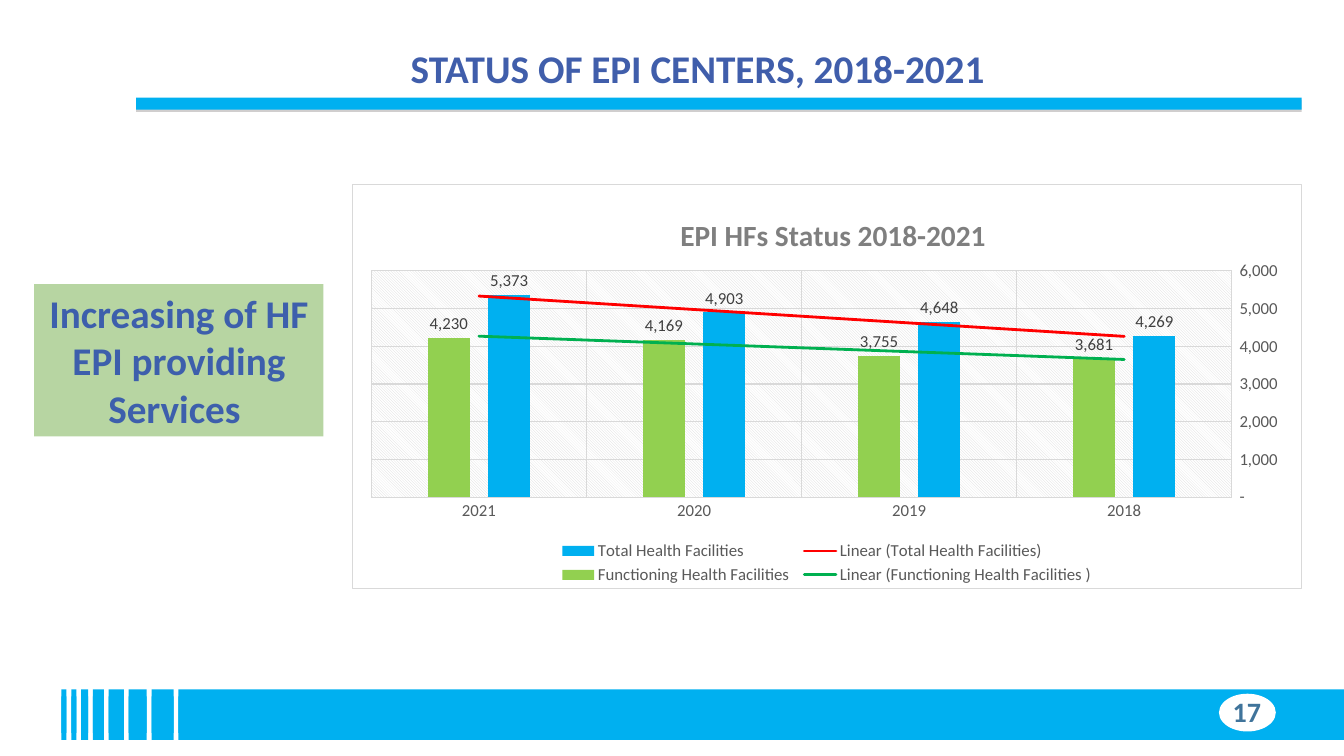
from dataclasses import dataclass

from lxml import etree
from pptx import Presentation
from pptx.chart.data import CategoryChartData
from pptx.dml.color import RGBColor
from pptx.enum import chart as charts, shapes, text
from pptx.oxml import parse_xml
from pptx.oxml.ns import nsdecls, qn
from pptx.util import Pt

SKY = RGBColor(0x00, 0xB0, 0xF0)
LIME = RGBColor(0x92, 0xD0, 0x50)
GREEN = RGBColor(0x00, 0xB0, 0x50)
LEAF = RGBColor(0x70, 0xAD, 0x47)
RED = RGBColor(0xFF, 0x00, 0x00)
WHITE = RGBColor(0xFF, 0xFF, 0xFF)
SILVER = RGBColor(0xD0, 0xCE, 0xCE)
GRID = RGBColor(0xD9, 0xD9, 0xD9)
TITLE_GRAY = RGBColor(0x7F, 0x7F, 0x7F)
AXIS_GRAY = RGBColor(0x59, 0x59, 0x59)
LABEL_GRAY = RGBColor(0x40, 0x40, 0x40)
NAVY = RGBColor(0x40, 0x5E, 0xAB)
CALLOUT_BLUE = RGBColor(0x3D, 0x5F, 0xAC)
PAGE_BLUE = RGBColor(0x40, 0x74, 0x9B)
FONT = "Calibri"
ACCOUNTING = '_(* #,##0_);_(* \\(#,##0\\);_(* "-"??_);_(@_)'


@dataclass(frozen=True)
class Box:
    left: float
    top: float
    width: float
    height: float

    def lengths(self) -> tuple:
        return Pt(self.left), Pt(self.top), Pt(self.width), Pt(self.height)


@dataclass(frozen=True)
class Facilities:
    name: str
    counts: tuple
    color: RGBColor
    trend: RGBColor


YEARS = ("2018", "2019", "2020", "2021")
FACILITIES = (
    Facilities("Total Health Facilities", (4269, 4648, 4903, 5373), SKY, RED),
    Facilities("Functioning Health Facilities ", (3681, 3755, 4169, 4230), LIME, GREEN),
)
STRIPE_WIDTHS = (3.6, 3.6, 5.04, 7.92, 10.8, 12.96, 15.84, 832.5)
STRIPE_GAP = 3.4


def style_font(font, size: float, color: RGBColor, bold: bool = False) -> None:
    font.name, font.size, font.bold = FONT, Pt(size), bold
    font.color.rgb = color


def add_plain_shape(page, box: Box, color: RGBColor,
                    kind=shapes.MSO_SHAPE.RECTANGLE):
    shape = page.shapes.add_shape(kind, *box.lengths())
    shape.shadow.inherit = False
    shape.fill.solid()
    shape.fill.fore_color.rgb = color
    shape.line.fill.background()
    return shape


def add_heading(page) -> None:
    heading = page.shapes.title
    heading.left, heading.top, heading.width, heading.height = Box(
        270, 28, 456.5, 34).lengths()
    frame = heading.text_frame
    frame.text = "STATUS OF EPI CENTERS, 2018-2021"
    frame.auto_size = text.MSO_AUTO_SIZE.NONE
    frame.vertical_anchor = text.MSO_ANCHOR.TOP
    para = frame.paragraphs[0]
    para.alignment = text.PP_ALIGN.CENTER
    style_font(para.font, 28, NAVY, True)
    for top, color in ((71.3, SILVER), (69.8, SKY)):
        add_plain_shape(page, Box(97.2, top, 832.5, 8.6), color)


def add_footer(page) -> None:
    left = 43.9
    for width in STRIPE_WIDTHS:
        for top in (497.5, 492.5):
            add_plain_shape(page, Box(left, top, width, 31), SKY)
        left += width + STRIPE_GAP
    badge = add_plain_shape(page, Box(871.2, 496, 39.6, 26), WHITE,
                            shapes.MSO_SHAPE.OVAL)
    badge.line.color.rgb = WHITE
    badge.line.width = Pt(1)
    number = page.shapes.add_textbox(*Box(873.4, 492.5, 36, 31.5).lengths())
    number.text_frame.text = "17"
    number.text_frame.word_wrap = True
    style_font(number.text_frame.paragraphs[0].font, 20, PAGE_BLUE, True)


def add_callout(page) -> None:
    callout = add_plain_shape(page, Box(24.5, 203, 206.6, 108.7), LEAF)
    color = callout.fill._xPr.find(qn("a:solidFill"))[0]
    etree.SubElement(color, qn("a:alpha"), val="50000")
    frame = callout.text_frame
    frame.word_wrap = True
    frame.text = "Increasing of HF EPI providing Services "
    para = frame.paragraphs[0]
    para.alignment = text.PP_ALIGN.CENTER
    style_font(para.font, 28, CALLOUT_BLUE, True)


def manual_layout(inner: bool = False, **edges: float):
    """Chart layout whose edges are fractions of the chart area."""
    target = '<c:layoutTarget val="inner"/>' if inner else ""
    modes = "".join(f'<c:{edge}Mode val="edge"/>' for edge in "xy")
    values = "".join(f'<c:{edge} val="{value}"/>' for edge, value in edges.items())
    return parse_xml(f'<c:layout {nsdecls("c")}><c:manualLayout>{target}{modes}'
                     f'{values}</c:manualLayout></c:layout>')


def remove_layout(element) -> None:
    for layout in element.findall(qn("c:layout")):
        element.remove(layout)


def area_style(fill: str, border: str):
    return parse_xml(f'<c:spPr {nsdecls("c", "a")}>{fill}{border}</c:spPr>')


def add_trend(series, color: RGBColor) -> None:
    trend = parse_xml(
        f'<c:trendline {nsdecls("c", "a")}><c:spPr><a:ln w="{Pt(2)}" cap="rnd">'
        f'<a:solidFill><a:srgbClr val="{color}"/></a:solidFill></a:ln></c:spPr>'
        '<c:trendlineType val="linear"/><c:dispRSqr val="0"/>'
        '<c:dispEq val="0"/></c:trendline>')
    series._element.find(qn("c:cat")).addprevious(trend)


def style_axis(axis) -> None:
    axis.major_tick_mark = axis.minor_tick_mark = charts.XL_TICK_MARK.NONE
    axis.has_major_gridlines = True
    style_font(axis.tick_labels.font, 12, AXIS_GRAY)
    grid = axis.major_gridlines.format.line
    grid.color.rgb = GRID
    grid.width = Pt(0.75)


def add_status_chart(page) -> None:
    data = CategoryChartData(number_format="#,##0")
    data.categories = YEARS
    for facilities in FACILITIES:
        data.add_series(facilities.name, facilities.counts)
    chart = page.shapes.add_chart(charts.XL_CHART_TYPE.COLUMN_CLUSTERED,
                                  *Box(251.4, 131.7, 678.3, 289.3).lengths(),
                                  data).chart
    style_font(chart.font, 10, RGBColor(0, 0, 0))

    title = chart.chart_title
    title.text_frame.text = "EPI HFs Status 2018-2021"
    style_font(title.text_frame.paragraphs[0].font, 21, TITLE_GRAY, True)
    remove_layout(title._element)
    title._element.find(qn("c:tx")).addnext(manual_layout(x=0.34, y=0.06))

    chart.has_legend = True
    chart.legend.position = charts.XL_LEGEND_POSITION.BOTTOM
    chart.legend.include_in_layout = False
    style_font(chart.legend.font, 12, AXIS_GRAY)

    style_axis(chart.category_axis)
    chart.category_axis.reverse_order = True
    chart.category_axis.format.line.color.rgb = GRID
    chart.category_axis.format.line.width = Pt(0.75)
    style_axis(chart.value_axis)
    chart.value_axis.format.line.fill.background()
    chart.value_axis.tick_labels.number_format = ACCOUNTING
    chart.value_axis.tick_labels.number_format_is_linked = False

    plot = chart.plots[0]
    plot.gap_width, plot.overlap, plot.vary_by_categories = 267, -43, False
    for series, facilities in zip(plot.series, FACILITIES):
        series.format.fill.solid()
        series.format.fill.fore_color.rgb = facilities.color
        labels = series.data_labels
        labels.show_value = True
        labels.position = charts.XL_LABEL_POSITION.OUTSIDE_END
        style_font(labels.font, 12, LABEL_GRAY)
        add_trend(series, facilities.trend)

    area = chart._chartSpace.find(qn("c:chart"))
    plot_area = area.find(qn("c:plotArea"))
    remove_layout(plot_area)
    plot_area.insert(0, manual_layout(inner=True, x=0.02, y=0.213, w=0.907, h=0.56))
    gray, white = (f'<a:srgbClr val="{color}"/>' for color in (GRID, WHITE))
    plot_area.append(area_style(
        f'<a:pattFill prst="ltDnDiag"><a:fgClr>{gray}</a:fgClr>'
        f'<a:bgClr>{white}</a:bgClr></a:pattFill>', '<a:ln><a:noFill/></a:ln>'))
    area.addnext(area_style(
        f'<a:solidFill>{white}</a:solidFill>',
        f'<a:ln w="{Pt(0.75)}"><a:solidFill>{gray}</a:solidFill></a:ln>'))


def main() -> None:
    deck = Presentation()
    deck.slide_width, deck.slide_height = Pt(960), Pt(540)
    page = deck.slides.add_slide(deck.slide_layouts[5])
    add_heading(page)
    add_footer(page)
    add_status_chart(page)
    add_callout(page)
    deck.save("out.pptx")


if __name__ == "__main__":
    main()
